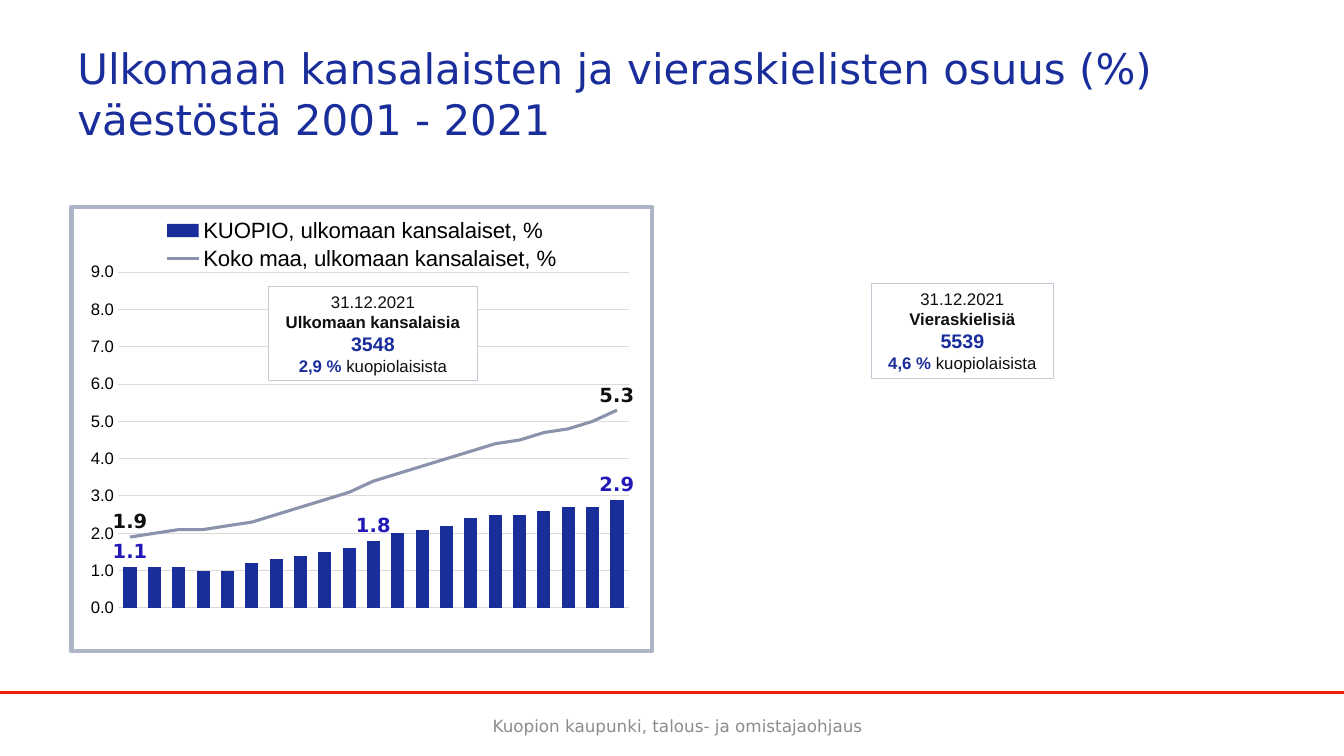
from dataclasses import dataclass

from lxml import etree
from pptx import Presentation
from pptx.chart.data import CategoryChartData
from pptx.dml.color import RGBColor
from pptx.enum.chart import (XL_CHART_TYPE, XL_LABEL_POSITION, XL_LEGEND_POSITION,
                             XL_MARKER_STYLE, XL_TICK_LABEL_POSITION, XL_TICK_MARK)
from pptx.enum.shapes import MSO_CONNECTOR, MSO_SHAPE
from pptx.enum.text import MSO_ANCHOR, PP_ALIGN
from pptx.oxml import parse_xml
from pptx.oxml.ns import nsdecls, qn
from pptx.util import Cm, Pt

COLUMN = XL_CHART_TYPE.COLUMN_CLUSTERED
ABOVE, OUTSIDE = XL_LABEL_POSITION.ABOVE, XL_LABEL_POSITION.OUTSIDE_END
TOP = XL_LEGEND_POSITION.TOP
NO_MARK, NO_TICK = XL_MARKER_STYLE.NONE, XL_TICK_MARK.NONE
NO_LABEL = XL_TICK_LABEL_POSITION.NONE
RECT, STRAIGHT = MSO_SHAPE.RECTANGLE, MSO_CONNECTOR.STRAIGHT
MIDDLE, BOTTOM = MSO_ANCHOR.MIDDLE, MSO_ANCHOR.BOTTOM
LEFT, CENTER = PP_ALIGN.LEFT, PP_ALIGN.CENTER


@dataclass(frozen=True)
class Theme:
    blue: str = "192D9B"
    violet: str = "2319B9"
    ink: str = "0F0F0F"
    black: str = "000000"
    white: str = "FFFFFF"
    slate: str = "8993AB"
    frame: str = "ADB4C5"
    edge: str = "C5CAD6"
    grid: str = "DBDBDB"
    gray: str = "8C8C8C"
    red: str = "F01E00"
    head: str = "DejaVu Sans"
    body: str = "Arial"
    title: int = 30
    legend: int = 16
    large: int = 14
    small: int = 12


T = Theme()
YEARS = [str(year) for year in range(2001, 2022)]
KUOPIO = [1.1, 1.1, 1.1, 1, 1, 1.2, 1.3, 1.4, 1.5, 1.6, 1.8,
          2, 2.1, 2.2, 2.4, 2.5, 2.5, 2.6, 2.7, 2.7, 2.9]
NATION = [1.9, 2, 2.1, 2.1, 2.2, 2.3, 2.5, 2.7, 2.9, 3.1, 3.4,
          3.6, 3.8, 4, 4.2, 4.4, 4.5, 4.7, 4.8, 5, 5.3]


def style(font, size, color, face, bold=False):
    font.size, font.name, font.bold = Pt(size), face, bold
    font.color.rgb = RGBColor.from_string(color)


def stroke(line, color, width):
    line.color.rgb = RGBColor.from_string(color)
    line.width = Pt(width)


def paint(fill, color):
    fill.solid()
    fill.fore_color.rgb = RGBColor.from_string(color)


def write(frame, rows, align, anchor):
    """Fill a text frame; each row is a list of (text, size, color, face, bold)."""
    frame.word_wrap = True
    frame.vertical_anchor = anchor
    for i, row in enumerate(rows):
        para = frame.paragraphs[0] if i == 0 else frame.add_paragraph()
        para.alignment = align
        for text, *look in row:
            run = para.add_run()
            run.text = text
            style(run.font, *look)


def add_text(slide, area, row, align, anchor):
    box = slide.shapes.add_textbox(*map(Cm, area))
    write(box.text_frame, [row], align, anchor)


def add_rule(slide, y, width):
    rule = slide.shapes.add_connector(STRAIGHT, 0, Cm(y), Cm(width), Cm(y))
    stroke(rule.line, T.red, 2)
    etree.SubElement(rule._element.spPr, qn("a:effectLst"))


def add_note(slide, area, group, count, share):
    box = slide.shapes.add_shape(RECT, *map(Cm, area))
    box.shadow.inherit = False
    paint(box.fill, T.white)
    stroke(box.line, T.edge, 0.75)
    rows = [
        [("31.12.2021", T.small, T.ink, T.body, False)],
        [(group, T.small, T.ink, T.body, True)],
        [(count, T.large, T.blue, T.body, True)],
        [(share + " ", T.small, T.blue, T.body, True),
         ("kuopiolaisista", T.small, T.ink, T.body, False)],
    ]
    write(box.text_frame, rows, CENTER, MIDDLE)


def split_line(chart):
    """Move the second column series into a line plot on the same axes."""
    bars = chart._chartSpace.find(".//" + qn("c:barChart"))
    ser = bars.findall(qn("c:ser"))[1]
    for flag in ser.findall(qn("c:invertIfNegative")):
        ser.remove(flag)
    line = parse_xml(f'<c:lineChart {nsdecls("c")}><c:grouping val="standard"/>'
                     '<c:varyColors val="0"/><c:marker val="1"/></c:lineChart>')
    line.insert(2, ser)
    for axis in bars.findall(qn("c:axId")):
        etree.SubElement(line, qn("c:axId")).set("val", axis.get("val"))
    bars.addnext(line)


def place_plot(chart, x, y, w, h):
    area = chart._chartSpace.find(".//" + qn("c:plotArea"))
    for old in area.findall(qn("c:layout")):
        area.remove(old)
    parts = {"layoutTarget": "inner", "xMode": "edge", "yMode": "edge",
             "x": x, "y": y, "w": w, "h": h}
    inner = "".join(f'<c:{key} val="{val}"/>' for key, val in parts.items())
    area.insert(0, parse_xml(f'<c:layout {nsdecls("c")}><c:manualLayout>{inner}'
                             '</c:manualLayout></c:layout>'))


def frame_chart(chart):
    chart._chartSpace.find(qn("c:chart")).addnext(parse_xml(
        f'<c:spPr {nsdecls("c", "a")}>'
        f'<a:solidFill><a:srgbClr val="{T.white}"/></a:solidFill>'
        f'<a:ln w="{Pt(3)}"><a:solidFill><a:srgbClr val="{T.frame}"/></a:solidFill>'
        '<a:round/></a:ln></c:spPr>'))


def label(series, spots, color, place):
    series.data_labels.show_value = False
    for spot in spots:
        tag = series.points[spot].data_label
        style(tag.font, T.large, color, T.head, True)
        tag.position = place


def style_axes(chart):
    cat, val = chart.category_axis, chart.value_axis
    for axis in (cat, val):
        axis.major_tick_mark = axis.minor_tick_mark = NO_TICK
        style(axis.tick_labels.font, T.small, T.black, T.body)
    cat.tick_label_position = NO_LABEL
    stroke(cat.format.line, T.grid, 0.75)
    val.minimum_scale, val.maximum_scale, val.major_unit = 0, 9, 1
    val.tick_labels.number_format = "#,##0.0"
    val.tick_labels.number_format_is_linked = False
    val.format.line.fill.background()
    stroke(val.major_gridlines.format.line, T.grid, 0.75)


def add_trend(slide, area):
    data = CategoryChartData(number_format="0.0")
    data.categories = YEARS
    data.add_series("KUOPIO, ulkomaan kansalaiset, %", KUOPIO)
    data.add_series("Koko maa, ulkomaan kansalaiset, %", NATION)
    chart = slide.shapes.add_chart(COLUMN, *map(Cm, area), data).chart
    chart.has_title = False
    style(chart.font, T.small, T.ink, T.head)
    split_line(chart)
    place_plot(chart, 0.08, 0.147, 0.881, 0.756)
    frame_chart(chart)
    style_axes(chart)

    chart.has_legend = True
    chart.legend.position = TOP
    chart.legend.include_in_layout = True
    style(chart.legend.font, T.legend, T.black, T.body)

    bars, line = chart.plots
    bars.gap_width = 85
    bars.vary_by_categories = False
    paint(bars.series[0].format.fill, T.blue)
    label(bars.series[0], (0, 10, 20), T.violet, OUTSIDE)
    nation = line.series[0]
    nation.smooth = False
    nation.marker.style = NO_MARK
    stroke(nation.format.line, T.slate, 2.25)
    label(nation, (0, 20), T.ink, ABOVE)


def main():
    deck = Presentation()
    deck.slide_width, deck.slide_height = Cm(33.87), Cm(19.05)
    slide = deck.slides.add_slide(deck.slide_layouts[6])
    add_rule(slide, 17.45, 33.87)
    add_text(slide, (1.7, 0.76, 30.48, 3.18),
             [("Ulkomaan kansalaisten ja vieraskielisten osuus (%) väestöstä 2001 - 2021",
               T.title, T.blue, T.head)], LEFT, MIDDLE)
    add_text(slide, (10.59, 17.65, 12.98, 1.02),
             [("Kuopion kaupunki, talous- ja omistajaohjaus",
               T.small, T.gray, T.head)], CENTER, BOTTOM)
    add_trend(slide, (1.75, 5.16, 14.73, 11.3))
    add_note(slide, (6.76, 7.21, 5.28, 2.39), "Ulkomaan kansalaisia", "3548", "2,9 %")
    add_note(slide, (21.97, 7.14, 4.57, 2.39), "Vieraskielisiä", "5539", "4,6 %")
    deck.save("out.pptx")


if __name__ == "__main__":
    main()
